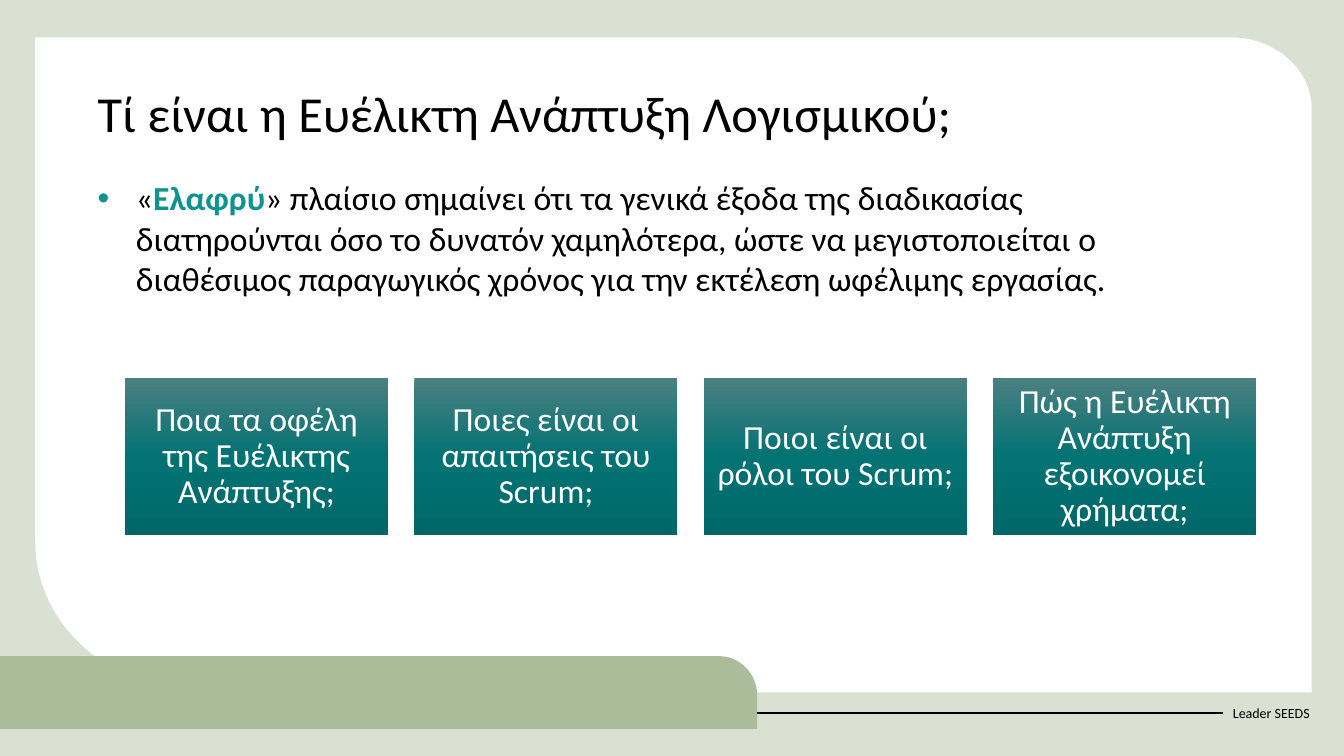
from copy import deepcopy
from math import cos, radians, sin

from lxml import etree
from pptx import Presentation
from pptx.dml.color import RGBColor
from pptx.enum.shapes import MSO_CONNECTOR, MSO_SHAPE
from pptx.enum.text import MSO_ANCHOR, PP_ALIGN
from pptx.oxml.ns import qn
from pptx.util import Inches, Pt

RECTANGLE = MSO_SHAPE.RECTANGLE
STRAIGHT = MSO_CONNECTOR.STRAIGHT
TOP, MIDDLE = MSO_ANCHOR.TOP, MSO_ANCHOR.MIDDLE
CENTER = PP_ALIGN.CENTER

FONT = "Calibri"
BLACK = RGBColor(0x00, 0x00, 0x00)
WHITE = RGBColor(0xFF, 0xFF, 0xFF)
PALE_SAGE = RGBColor(0xDA, 0xE0, 0xD2)
SAGE = RGBColor(0xAA, 0xBC, 0x99)
TEAL = RGBColor(0x0D, 0x93, 0x90)
CARD_STOPS = [
    (0, RGBColor(0x4B, 0x80, 0x81)),
    (0.5, RGBColor(0x03, 0x72, 0x73)),
    (1, RGBColor(0x00, 0x68, 0x69)),
]

TITLE = "Τί είναι η Ευέλικτη Ανάπτυξη Λογισμικού;"
DEFINITION = [
    ("«", False),
    ("Ελαφρύ", True),
    ("» πλαίσιο σημαίνει ότι τα γενικά έξοδα της διαδικασίας διατηρούνται "
     "όσο το δυνατόν χαμηλότερα, ώστε να μεγιστοποιείται ο διαθέσιμος "
     "παραγωγικός χρόνος για την εκτέλεση ωφέλιμης εργασίας.", False),
]
QUESTIONS = [
    "Ποια τα οφέλη της Ευέλικτης Ανάπτυξης;",
    "Ποιες είναι οι απαιτήσεις του Scrum;",
    "Ποιοι είναι οι ρόλοι του Scrum;",
    "Πώς η Ευέλικτη Ανάπτυξη εξοικονομεί χρήματα;",
]
CARD_LEFT, CARD_TOP, CARD_WIDTH, CARD_HEIGHT = 1.24, 3.75, 2.61, 1.56
CARD_STEP = 2.87


def rounded_corner(center_x, center_y, radius_x, radius_y, start):
    angles = [radians(start + 3 * step) for step in range(31)]
    return [(center_x + radius_x * cos(a), center_y + radius_y * sin(a))
            for a in angles]


def finish_shape(shape, color):
    shape.shadow.inherit = False
    shape.line.fill.background()
    shape.fill.solid()
    shape.fill.fore_color.rgb = color


def add_outline(slide, points, color):
    corners = [(Inches(x), Inches(y)) for x, y in points]
    builder = slide.shapes.build_freeform(*corners[0])
    builder.add_line_segments(corners[1:], close=True)
    finish_shape(builder.convert_to_shape(), color)


def add_rectangle(slide, left, top, width, height, color):
    box = slide.shapes.add_shape(
        RECTANGLE, Inches(left), Inches(top), Inches(width), Inches(height))
    finish_shape(box, color)
    return box


def style_paragraph(paragraph, size, color, spacing=1.0):
    paragraph.line_spacing = spacing
    paragraph.font.name = FONT
    paragraph.font.size = Pt(size)
    paragraph.font.color.rgb = color


def add_text(slide, left, top, width, height, text, size, anchor=TOP, spacing=1.0):
    box = slide.shapes.add_textbox(
        Inches(left), Inches(top), Inches(width), Inches(height))
    frame = box.text_frame
    frame.word_wrap = True
    frame.vertical_anchor = anchor
    paragraph = frame.paragraphs[0]
    paragraph.text = text
    style_paragraph(paragraph, size, BLACK, spacing)
    return paragraph


def add_definition(slide):
    box = slide.shapes.add_textbox(
        Inches(0.87), Inches(1.71), Inches(11.22), Inches(1.72))
    box.text_frame.word_wrap = True
    paragraph = box.text_frame.paragraphs[0]
    properties = paragraph._p.get_or_add_pPr()
    properties.set("marL", str(Inches(0.38)))
    properties.set("indent", str(Inches(-0.38)))
    bullet_color = etree.SubElement(properties, qn("a:buClr"))
    etree.SubElement(bullet_color, qn("a:srgbClr"), val=str(TEAL))
    etree.SubElement(properties, qn("a:buFont"), typeface="Arial")
    etree.SubElement(properties, qn("a:buChar"), char="•")
    style_paragraph(paragraph, 24, BLACK)
    for text, emphasized in DEFINITION:
        run = paragraph.add_run()
        run.text = text
        if emphasized:
            run.font.bold = True
            run.font.color.rgb = TEAL


def add_question_card(slide, left, question):
    card = add_rectangle(slide, left, CARD_TOP, CARD_WIDTH, CARD_HEIGHT, TEAL)
    card.fill.gradient()
    card.fill.gradient_angle = 270
    stop_list = card._element.spPr.find(".//" + qn("a:gsLst"))
    stop_list.insert(1, deepcopy(stop_list[0]))
    for stop, (position, color) in zip(card.fill.gradient_stops, CARD_STOPS):
        stop.position = position
        stop.color.rgb = color
    frame = card.text_frame
    frame.word_wrap = True
    frame.vertical_anchor = MIDDLE
    frame.margin_left = frame.margin_right = Inches(0.1)
    frame.margin_top = frame.margin_bottom = Inches(0.1)
    paragraph = frame.paragraphs[0]
    paragraph.text = question
    paragraph.alignment = CENTER
    style_paragraph(paragraph, 24, WHITE, 0.9)


def add_footer_rule(slide):
    rule = slide.shapes.add_connector(
        STRAIGHT, Inches(0), Inches(7.07), Inches(12.13), Inches(7.07))
    rule.line.color.rgb = BLACK
    rule.line.width = Pt(1.5)
    etree.SubElement(rule._element.spPr, qn("a:effectLst"))


def add_background(slide):
    add_rectangle(slide, 0, 0, 13.33, 7.5, PALE_SAGE)
    panel = [(0.35, 0.37), *rounded_corner(12.2, 1.08, 0.81, 0.71, -90),
             (13.01, 6.87), *rounded_corner(2.05, 5.38, 1.7, 1.49, 90)]
    add_outline(slide, panel, WHITE)
    add_text(slide, 12.13, 6.87, 1.01, 0.4, "Leader SEEDS", 10, MIDDLE)
    add_footer_rule(slide)
    footer_tab = [(0, 7.23), (0, 6.51),
                  *rounded_corner(7.13, 6.9, 0.38, 0.39, -90), (7.51, 7.23)]
    add_outline(slide, footer_tab, SAGE)


def main():
    presentation = Presentation()
    presentation.slide_width = Inches(13.33)
    presentation.slide_height = Inches(7.5)
    slide = presentation.slides.add_slide(presentation.slide_layouts[6])
    add_background(slide)
    add_text(slide, 0.87, 0.83, 11.59, 0.88, TITLE, 36, spacing=0.9)
    add_definition(slide)
    for index, question in enumerate(QUESTIONS):
        add_question_card(slide, CARD_LEFT + index * CARD_STEP, question)
    presentation.save("out.pptx")


if __name__ == "__main__":
    main()
